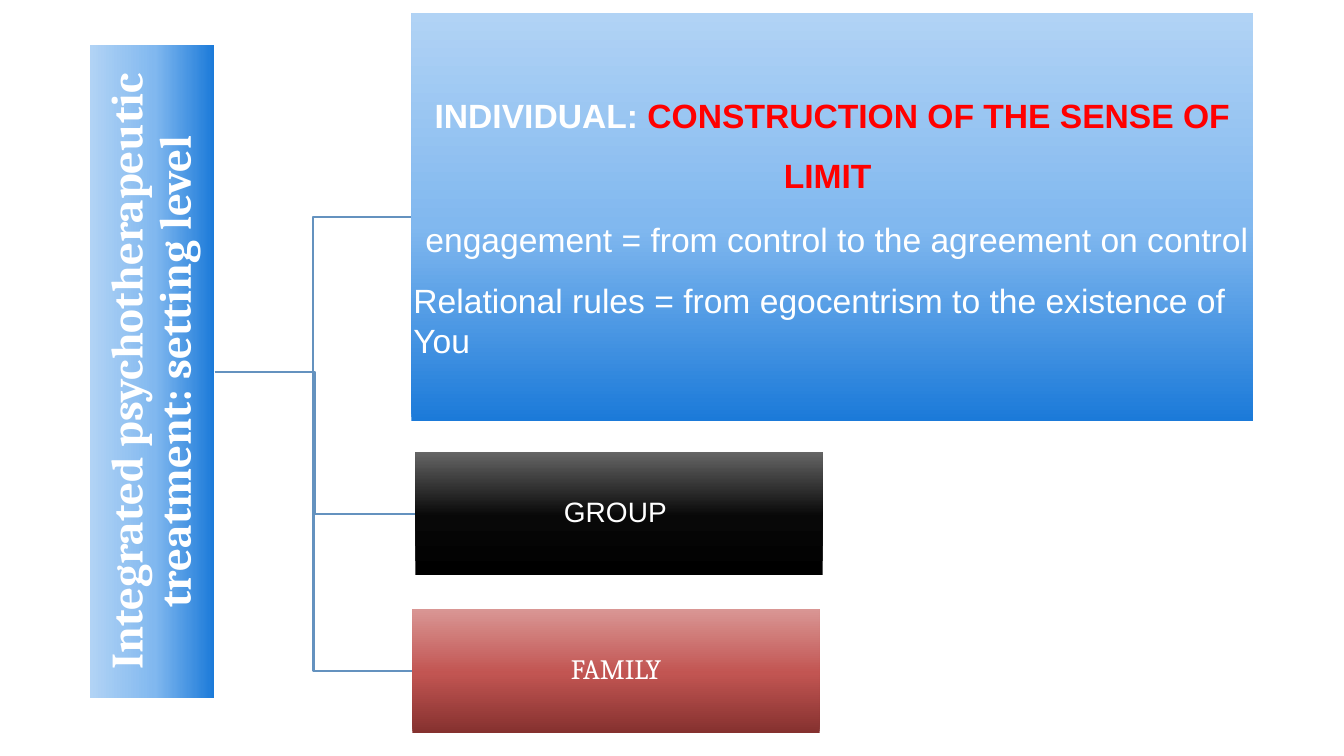
from copy import deepcopy
from dataclasses import dataclass

from pptx import Presentation
from pptx.dml.color import RGBColor
from pptx.enum.shapes import MSO_CONNECTOR, MSO_SHAPE
from pptx.enum.text import MSO_ANCHOR, MSO_AUTO_SIZE, PP_ALIGN
from pptx.oxml.ns import qn
from pptx.util import Inches, Pt

RECTANGLE = MSO_SHAPE.RECTANGLE
ELBOW = MSO_CONNECTOR.ELBOW
MIDDLE = MSO_ANCHOR.MIDDLE
NO_AUTOFIT = MSO_AUTO_SIZE.NONE
LEFT, CENTER = PP_ALIGN.LEFT, PP_ALIGN.CENTER

WHITE, RED, LINE_BLUE = "FFFFFF", "FF0000", "6492BF"
BLUE = ("1B7AD9", "81B8EF", "B1D3F5")
BLACK = ("000000", "080808", "666666")
BRICK = ("85312F", "C25552", "D99694")
STOPS = (0, 0.48, 1)
TRUNK_X, TRUNK_Y = 2.13, 3.69


@dataclass
class Span:
    text: str
    size: float = 24
    color: str = WHITE
    bold: bool = False
    font: str = "Arial"


@dataclass
class Para:
    spans: list[Span]
    align: PP_ALIGN = CENTER
    spacing: float = 0.9
    after: float = 10


@dataclass
class Panel:
    left: float
    top: float
    width: float
    height: float
    colors: tuple[str, str, str]
    paras: list[Para]
    inset: float = 0.01


TITLE = Panel(-1.73, 3.07, 6.48, 1.23, BLUE, [
    Para([Span("Integrated psychotherapeutic treatment: setting level",
               size=32, bold=True, font="Cambria")], after=13),
], inset=0.02)

BRANCHES = [
    Panel(4.12, 4.48, 4.04, 1.23, BLACK, [Para([Span("GROUP ", size=20)], after=8)]),
    Panel(4.09, 6.04, 4.04, 1.23, BRICK,
          [Para([Span("FAMILY", size=20, font="Cambria")], after=8)]),
    Panel(4.08, 0.13, 8.35, 4.05, BLUE, [
        Para([Span("INDIVIDUAL: ", bold=True),
              Span("CONSTRUCTION OF THE SENSE OF LIMIT ", color=RED, bold=True)],
             spacing=1.5),
        Para([Span(" ", size=31),
              Span("engagement = from control to the agreement on control")],
             align=LEFT, spacing=1, after=13),
        Para([Span("Relational rules = from egocentrism to the existence of You")],
             align=LEFT, spacing=1),
    ], inset=0.02),
]


def rgb(color: str) -> RGBColor:
    return RGBColor.from_string(color)


def fill_gradient(shape, colors: tuple[str, str, str]) -> None:
    shape.fill.gradient()
    shape.fill.gradient_angle = 90
    stop_list = shape._element.spPr.find(qn("a:gradFill")).find(qn("a:gsLst"))
    stop_list.append(deepcopy(stop_list[-1]))
    for stop, position, color in zip(shape.fill.gradient_stops, STOPS, colors):
        stop.position = position
        stop.color.rgb = rgb(color)


def add_span(para, text: str, *, size: float, color: str, bold: bool, font: str) -> None:
    run = para.add_run()
    run.text = text
    run.font.size = Pt(size)
    run.font.color.rgb = rgb(color)
    run.font.bold = bold
    run.font.name = font


def format_panel(shape, panel: Panel) -> None:
    shape.left, shape.top = Inches(panel.left), Inches(panel.top)
    shape.width, shape.height = Inches(panel.width), Inches(panel.height)
    fill_gradient(shape, panel.colors)
    shape.line.fill.background()
    frame = shape.text_frame
    frame.word_wrap = True
    frame.auto_size = NO_AUTOFIT
    frame.vertical_anchor = MIDDLE
    frame.margin_left = frame.margin_right = Inches(panel.inset)
    frame.margin_top = frame.margin_bottom = Inches(panel.inset)
    for index, item in enumerate(panel.paras):
        para = frame.add_paragraph() if index else frame.paragraphs[0]
        para.alignment = item.align
        para.line_spacing = item.spacing
        para.space_before = Pt(0)
        para.space_after = Pt(item.after)
        for span in item.spans:
            add_span(para, span.text, size=span.size, color=span.color,
                     bold=span.bold, font=span.font)


def add_branch(slide, panel: Panel) -> None:
    connector = slide.shapes.add_connector(
        ELBOW, Inches(TRUNK_X), Inches(TRUNK_Y),
        Inches(panel.left), Inches(panel.top + panel.height / 2))
    connector.line.color.rgb = rgb(LINE_BLUE)
    connector.line.width = Pt(1.5)
    properties = connector._element.spPr
    properties.append(properties.makeelement(qn("a:effectLst"), {}))
    box = slide.shapes.add_shape(RECTANGLE, 0, 0, 0, 0)
    box.shadow.inherit = False
    format_panel(box, panel)


def main() -> None:
    deck = Presentation()
    deck.slide_width, deck.slide_height = Inches(13.33), Inches(7.5)
    slide = deck.slides.add_slide(deck.slide_layouts.get_by_name("Title Only"))
    title = slide.shapes.title
    format_panel(title, TITLE)
    title.rotation = 270
    for panel in BRANCHES:
        add_branch(slide, panel)
    deck.save("out.pptx")


if __name__ == "__main__":
    main()
